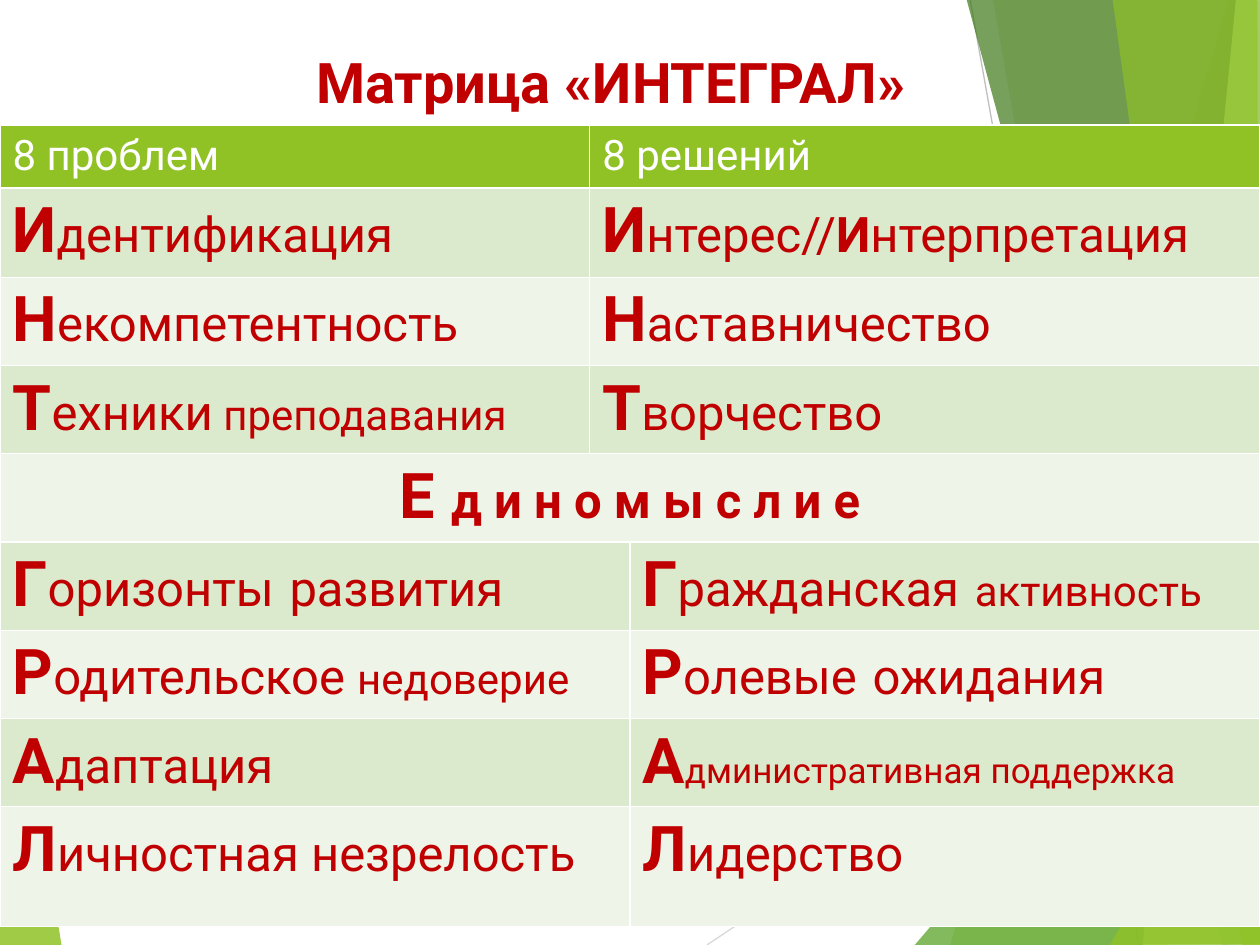
from lxml.etree import SubElement
from pptx import Presentation
from pptx.dml.color import RGBColor
from pptx.enum.text import MSO_ANCHOR, PP_ALIGN as Align
from pptx.oxml.ns import qn
from pptx.util import Inches, Pt

COLORS = {
    "lime": "90C226", "green": "54A021", "forest": "3F7819", "pale": "C0E474",
    "silver": "D9D9D9", "gray": "BFBFBF", "red": "C00000", "white": "FFFFFF",
    "band": "DBE9CD", "light band": "EEF4E8",
}
FONT = "Roboto"
INITIAL, LARGE, MEDIUM, SMALL = 36, 28, 24, 20

# Outline points, colour, opacity in percent
LEFT_FACET = ([(-0.01, 4.39), (0.49, 7.51), (-0.01, 7.5)], "lime", 85)
RIGHT_FACETS = [
    ([(9.75, 0), (7.54, 7.5), (10.02, 7.51), (10.01, 0.01)], "lime", 30),
    ([(7.88, -0.01), (9.19, 7.5), (10.01, 7.5), (10.01, -0.01)], "lime", 20),
    ([(7.26, 7.5), (10, 4.29), (10.01, 7.5)], "green", 72),
    ([(7.67, -0.01), (9.7, 7.5), (10.01, 7.49), (10.01, -0.01)], "forest", 70),
    ([(9.81, -0.01), (9.07, 7.5), (10.01, 7.5), (10, -0.01)], "pale", 70),
    ([(8.83, -0.01), (9.86, 7.5), (10, 7.5), (9.98, -0.01)], "lime", 65),
    ([(8.81, 7.5), (10.01, 5.35), (10.01, 7.49)], "lime", 80),
]
RAYS = [((5.61, 7.5), (10.01, 4.57), "silver"), ((7.7, 0), (9.04, 7.5), "gray")]


def acrostic(initial, rest, *more):
    """Runs of a cell: a big bold initial, the rest of its word, further runs."""
    return [(initial, INITIAL, True), (rest, LARGE, False), *more]


WIDE_GAP = (" ", INITIAL, True)
COLUMNS = [4.68, 0.32, 5]
ROWS = [0.47, 0.71] + [0.66] * 6 + [0.95]
HEADER = [[("8 проблем", MEDIUM, False)], [("8 решений", MEDIUM, False)]]
UPPER_PAIRS = [
    [acrostic("И", "дентификация"),
     acrostic("И", "нтерес//", ("И", LARGE, True), ("нтерпретация", LARGE, False))],
    [acrostic("Н", "екомпетентность"), acrostic("Н", "аставничество")],
    [acrostic("Т", "ехники", (" ", MEDIUM, True), ("преподавания", MEDIUM, False)),
     acrostic("Т", "ворчество")],
]
SHARED = [[("Е ", INITIAL, True), ("д и н о м ы с л и е", LARGE, True)]]
LOWER_PAIRS = [
    [acrostic("Г", "оризонты", WIDE_GAP, ("развития", LARGE, False)),
     acrostic("Г", "ражданская", WIDE_GAP, ("активность", MEDIUM, False))],
    [acrostic("Р", "одительское ", ("недоверие", MEDIUM, False)),
     acrostic("Р", "олевые", WIDE_GAP, ("ожидания", LARGE, False))],
    [acrostic("А", "даптация"),
     [("А", INITIAL, True), ("дминистративная поддержка", SMALL, False)]],
    [acrostic("Л", "ичностная незрелость"), acrostic("Л", "идерство")],
]
# First and last column of each cell in a row
UPPER_SPANS, SHARED_SPAN, LOWER_SPANS = [(0, 0), (1, 2)], [(0, 2)], [(0, 1), (2, 2)]


class MatrixSlide:
    def __init__(self, slide):
        self.slide = slide
        self.shapes = slide.shapes

    def color(self, name):
        return RGBColor.from_string(COLORS[name])

    def facet(self, points, color, opacity):
        units = [(round(x * 100), round(y * 100)) for x, y in points]
        builder = self.shapes.build_freeform(*units[0], scale=Inches(0.01))
        builder.add_line_segments(units[1:], close=True)
        shape = builder.convert_to_shape()
        shape.shadow.inherit = False
        shape.line.fill.background()
        shape.fill.solid()
        shape.fill.fore_color.rgb = self.color(color)
        fill = shape._element.spPr.find(qn("a:solidFill"))
        SubElement(fill[0], qn("a:alpha")).set("val", str(opacity * 1000))

    def ray(self, start, end, color):
        ends = [Inches(value) for value in (*start, *end)]
        connector = self.shapes.add_connector(1, *ends)
        connector.line.color.rgb = self.color(color)
        connector.line.width = Pt(0.75)
        SubElement(connector._element.spPr, qn("a:effectLst"))

    def add_runs(self, paragraph, runs, color, align=None):
        paragraph.alignment = align
        for text, size, bold in runs:
            run = paragraph.add_run()
            run.text = text
            run.font.name = FONT
            run.font.size = Pt(size)
            run.font.bold = bold
            run.font.color.rgb = self.color(color)

    def title(self, text):
        box = self.shapes.add_textbox(Inches(0.31), Inches(0.3), Inches(9.19), Inches(0.48))
        frame = box.text_frame
        frame.word_wrap = True
        frame.vertical_anchor = MSO_ANCHOR.TOP
        frame.margin_top = Inches(0.08)
        self.add_runs(frame.paragraphs[0], [(text, 32, True)], "red", Align.CENTER)

    def matrix(self, rows):
        """Each row is a pair: the runs of its cells and their column spans."""
        table = self.shapes.add_table(len(ROWS), len(COLUMNS), 0, Inches(0.99),
                                      Inches(10), Inches(6.36)).table
        for column, width in zip(table.columns, COLUMNS):
            column.width = Inches(width)
        for row, height in zip(table.rows, ROWS):
            row.height = Inches(height)
        for index, (contents, spans) in enumerate(rows):
            fill = "lime" if index == 0 else "band" if index % 2 else "light band"
            for runs, (first, last) in zip(contents, spans):
                cell = table.cell(index, first)
                if last > first:
                    cell.merge(table.cell(index, last))
                cell.fill.solid()
                cell.fill.fore_color.rgb = self.color(fill)
                self.add_runs(cell.text_frame.paragraphs[0], runs,
                              "red" if index else "white",
                              Align.CENTER if len(spans) == 1 else None)


def main():
    presentation = Presentation()
    presentation.slide_width, presentation.slide_height = Inches(10), Inches(7.5)
    page = MatrixSlide(presentation.slides.add_slide(presentation.slide_layouts[6]))
    page.facet(*LEFT_FACET)
    for ray in RAYS:
        page.ray(*ray)
    for facet in RIGHT_FACETS:
        page.facet(*facet)
    page.title("Матрица «ИНТЕГРАЛ» ")
    page.matrix([(pair, UPPER_SPANS) for pair in [HEADER, *UPPER_PAIRS]]
                + [(SHARED, SHARED_SPAN)]
                + [(pair, LOWER_SPANS) for pair in LOWER_PAIRS])
    presentation.save("out.pptx")


if __name__ == "__main__":
    main()
